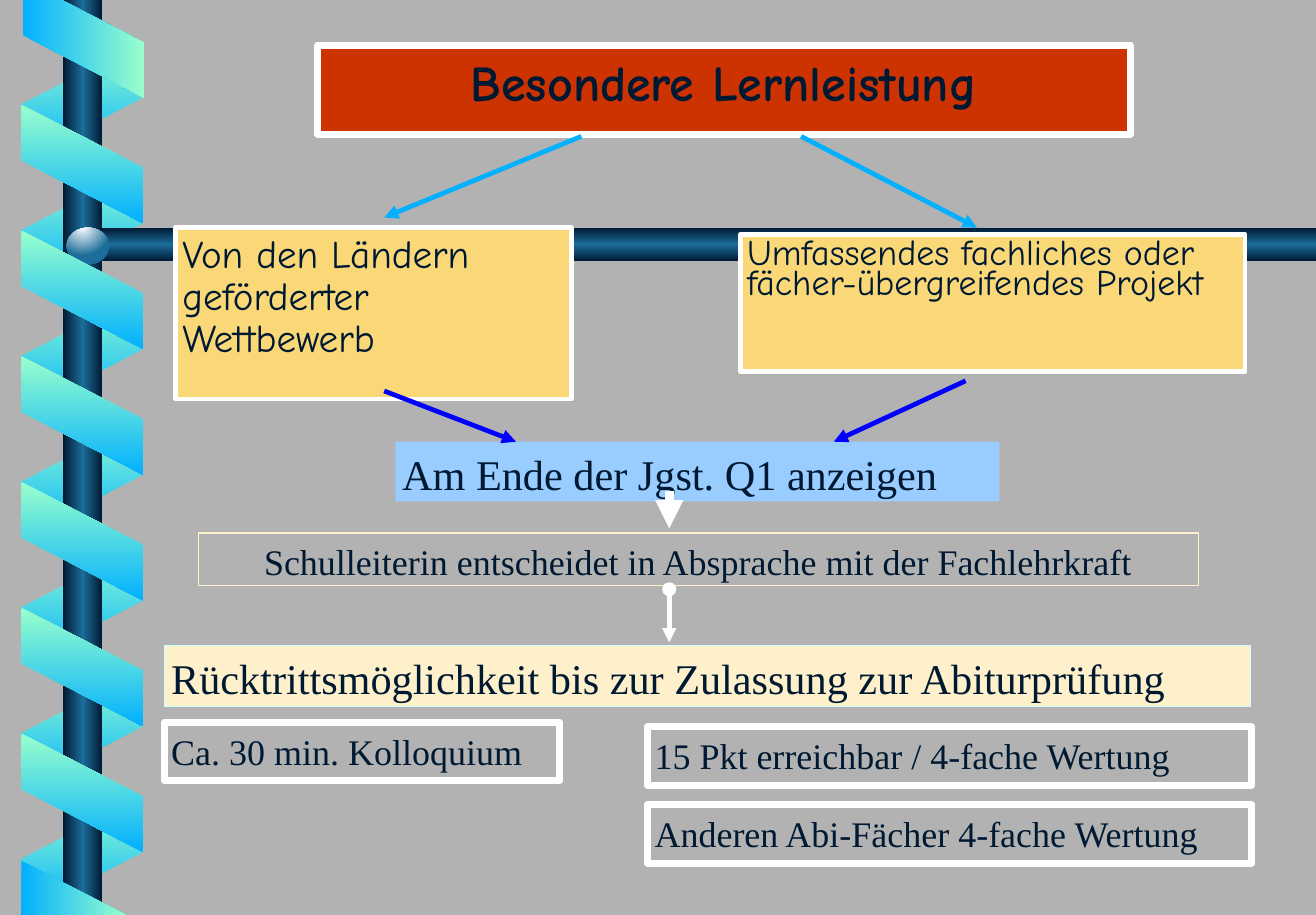
from dataclasses import dataclass
from typing import Optional

from lxml import etree
from pptx import Presentation
from pptx import util as u
from pptx.dml.color import RGBColor
from pptx.enum import shapes, text
from pptx.oxml import parse_xml
from pptx.oxml.ns import nsdecls, qn

# Grid of 292 columns by 203 rows; one cell is 0.04 inch square
CELL = u.Inches(0.04)
COLUMNS, ROWS = 292, 203

INK, WHITE, CREAM, GOLD = "001932", "FFFFFF", "FEF0CA", "FAD878"
BLUE, MINT, STEEL = "01B0FF", "99FFCC", "1C6D9A"
COMIC, TIMES = "Comic Neue", "Times New Roman"
ACROSS = '<a:lin ang="0" scaled="0"/>'
DOWN = '<a:lin ang="5400000" scaled="0"/>'
GLOW = ('<a:path path="circle"><a:fillToRect l="38000" t="-20000" '
        'r="62000" b="120000"/></a:path>')


@dataclass
class Box:
    wording: str
    col: float
    row: float
    cols: float
    rows: float
    size: float
    font: str = TIMES
    fill: Optional[str] = None
    border: Optional[str] = None
    border_width: float = 4.5
    bold: bool = False
    centred: bool = False
    spacing: float = 1.0


@dataclass
class Arrow:
    start: tuple[float, float]
    end: tuple[float, float]
    color: str
    width: float = 3
    head: Optional[str] = None


def cells(count: float) -> int:
    return round(count * CELL)


def rgb(color: str) -> RGBColor:
    return RGBColor.from_string(color)


def add_gradient(shape, colors: list[str], direction: str) -> None:
    """Fill a shape with evenly spaced colour stops and no outline."""
    shape.shadow.inherit = False
    shape.line.fill.background()
    shape.fill.gradient()
    stops = "".join(
        f'<a:gs pos="{100000 * i // (len(colors) - 1)}"><a:srgbClr val="{color}"/></a:gs>'
        for i, color in enumerate(colors))
    properties = shape._element.spPr
    properties.replace(properties.find(qn("a:gradFill")), parse_xml(
        f'<a:gradFill rotWithShape="1" {nsdecls("a")}>'
        f'<a:gsLst>{stops}</a:gsLst>{direction}</a:gradFill>'))


def add_outline(slide, points: list[tuple[float, float]], colors: list[str],
                direction: str) -> None:
    corners = [(cells(x), cells(y)) for x, y in points]
    builder = slide.shapes.build_freeform(*corners[0], scale=1.0)
    builder.add_line_segments(corners[1:], close=True)
    add_gradient(builder.convert_to_shape(), colors, direction)


def add_preset(slide, kind, col: float, row: float, cols: float, rows: float):
    shape = slide.shapes.add_shape(kind, cells(col), cells(row), cells(cols), cells(rows))
    shape.shadow.inherit = False
    return shape


def add_text(frame, wording: str, *, size: float, font: str, bold: bool,
             centred: bool, spacing: float) -> None:
    frame.word_wrap = True
    frame.vertical_anchor = text.MSO_ANCHOR.TOP
    frame.margin_left = frame.margin_right = cells(1.5)
    frame.margin_top = frame.margin_bottom = cells(1.5)
    paragraph = frame.paragraphs[0]
    paragraph.alignment = text.PP_ALIGN.CENTER if centred else text.PP_ALIGN.LEFT
    paragraph.line_spacing = spacing
    run = paragraph.add_run()
    run.text = wording
    run.font.size, run.font.name, run.font.bold = u.Pt(size), font, bold
    run.font.color.rgb = rgb(INK)


def add_box(slide, box: Box) -> None:
    shape = add_preset(slide, shapes.MSO_SHAPE.RECTANGLE,
                       box.col, box.row, box.cols, box.rows)
    if box.fill:
        shape.fill.solid()
        shape.fill.fore_color.rgb = rgb(box.fill)
    else:
        shape.fill.background()
    if box.border:
        shape.line.color.rgb = rgb(box.border)
        shape.line.width = u.Pt(box.border_width)
    else:
        shape.line.fill.background()
    add_text(shape.text_frame, box.wording, size=box.size, font=box.font,
             bold=box.bold, centred=box.centred, spacing=box.spacing)


def add_arrow(slide, arrow: Arrow) -> None:
    connector = slide.shapes.add_connector(
        shapes.MSO_CONNECTOR.STRAIGHT, *map(cells, arrow.start + arrow.end))
    connector.line.color.rgb = rgb(arrow.color)
    connector.line.width = u.Pt(arrow.width)
    line = connector.line._get_or_add_ln()
    if arrow.head:
        etree.SubElement(line, qn("a:headEnd"), type=arrow.head)
    etree.SubElement(line, qn("a:tailEnd"), type="triangle")
    etree.SubElement(connector._element.spPr, qn("a:effectLst"))


def add_helix(slide) -> None:
    """Draw the ribbon winding around the pole, with the cross beam."""
    left, right, pitch, drop, band = 4.75, 31.75, 27.9, 14, 12.3
    # Ribbon turns behind the pole
    for turn in range(7):
        top = 9.25 + turn * pitch
        add_outline(slide, [(right, top), (right, top + band),
                            (left, top + drop + band), (left, top + drop)],
                    [MINT, BLUE], DOWN)
    # Pole, beam and knob
    metal = [INK, STEEL, INK]
    pole = add_preset(slide, shapes.MSO_SHAPE.RECTANGLE, 14, 0, 8.75, ROWS)
    add_gradient(pole, metal, ACROSS)
    add_outline(slide, [(22.25, 50.5), (COLUMNS, 50.5), (COLUMNS, 58),
                        (22.25, 58), (17.5, 54.25)], metal, DOWN)
    knob = add_preset(slide, shapes.MSO_SHAPE.OVAL, 14.75, 50.5, 9.5, 8.25)
    add_gradient(knob, ["FEFFFF", STEEL], GLOW)
    # Ribbon turns in front, then the cut ends at top and bottom
    for turn in range(6):
        top = 23.25 + turn * pitch
        add_outline(slide, [(left, top), (right, top + drop),
                            (right, top + drop + band), (left, top + band)],
                    [MINT, BLUE], DOWN)
    for end in ([(5, 0), (5, 7.75), (32, 21.75), (32, 9.5), (13.75, 0)],
                [(28, ROWS), (left, 191), (left, ROWS)]):
        add_outline(slide, end, [BLUE, MINT], ACROSS)


BOXES = [
    Box("Besondere Lernleistung", 70.5, 10, 180.25, 19.75, 32, COMIC,
        "CC3300", WHITE, bold=True, centred=True),
    Box("Von den Ländern geförderter Wettbewerb", 39, 50.5, 87.75, 38, 25, COMIC,
        GOLD, WHITE, 3, spacing=0.9),
    Box("Umfassendes fachliches oder fächer-übergreifendes Projekt",
        164.25, 52, 112, 30.5, 23, COMIC, GOLD, WHITE, 3, spacing=0.7),
    Box("Am Ende der Jgst. Q1 anzeigen", 87.75, 98, 134, 13.25, 27, fill="99CCFF"),
    Box("Schulleiterin entscheidet in Absprache mit der Fachlehrkraft",
        44, 118.25, 222, 11.75, 23, border=CREAM, border_width=0.75, centred=True),
    Box("Rücktrittsmöglichkeit bis zur Zulassung zur Abiturprüfung",
        36.5, 143.25, 241, 13.5, 27, fill=CREAM, border="CCFFFF", border_width=1),
    Box("Ca. 30 min. Kolloquium", 36.5, 160.25, 87.75, 13, 23, border=WHITE),
    Box("15 Pkt erreichbar / 4-fache Wertung", 143.75, 161.25, 134, 13, 23, border=WHITE),
    Box("Anderen Abi-Fächer 4-fache Wertung", 143.75, 178.5, 134, 13, 23, border=WHITE),
]
ARROWS = [
    Arrow((129, 30.25), (85.25, 48.25), BLUE),
    Arrow((177.75, 30.25), (216.75, 50.5), BLUE),
    Arrow((85.25, 86.75), (114.5, 98), "0000FF"),
    Arrow((214.25, 84.5), (185, 98), "0000FF"),
    Arrow((148.5, 109), (148.5, 117.25), WHITE, 6),
    Arrow((148.5, 130.75), (148.5, 142.5), WHITE, head="oval"),
]


def main() -> None:
    deck = Presentation()
    deck.slide_width, deck.slide_height = cells(COLUMNS), cells(ROWS)
    slide = deck.slides.add_slide(deck.slide_layouts[6])
    slide.background.fill.solid()
    slide.background.fill.fore_color.rgb = rgb("B2B2B2")
    add_helix(slide)
    for box in BOXES:
        add_box(slide, box)
    for arrow in ARROWS:
        add_arrow(slide, arrow)
    deck.save("out.pptx")


if __name__ == "__main__":
    main()
